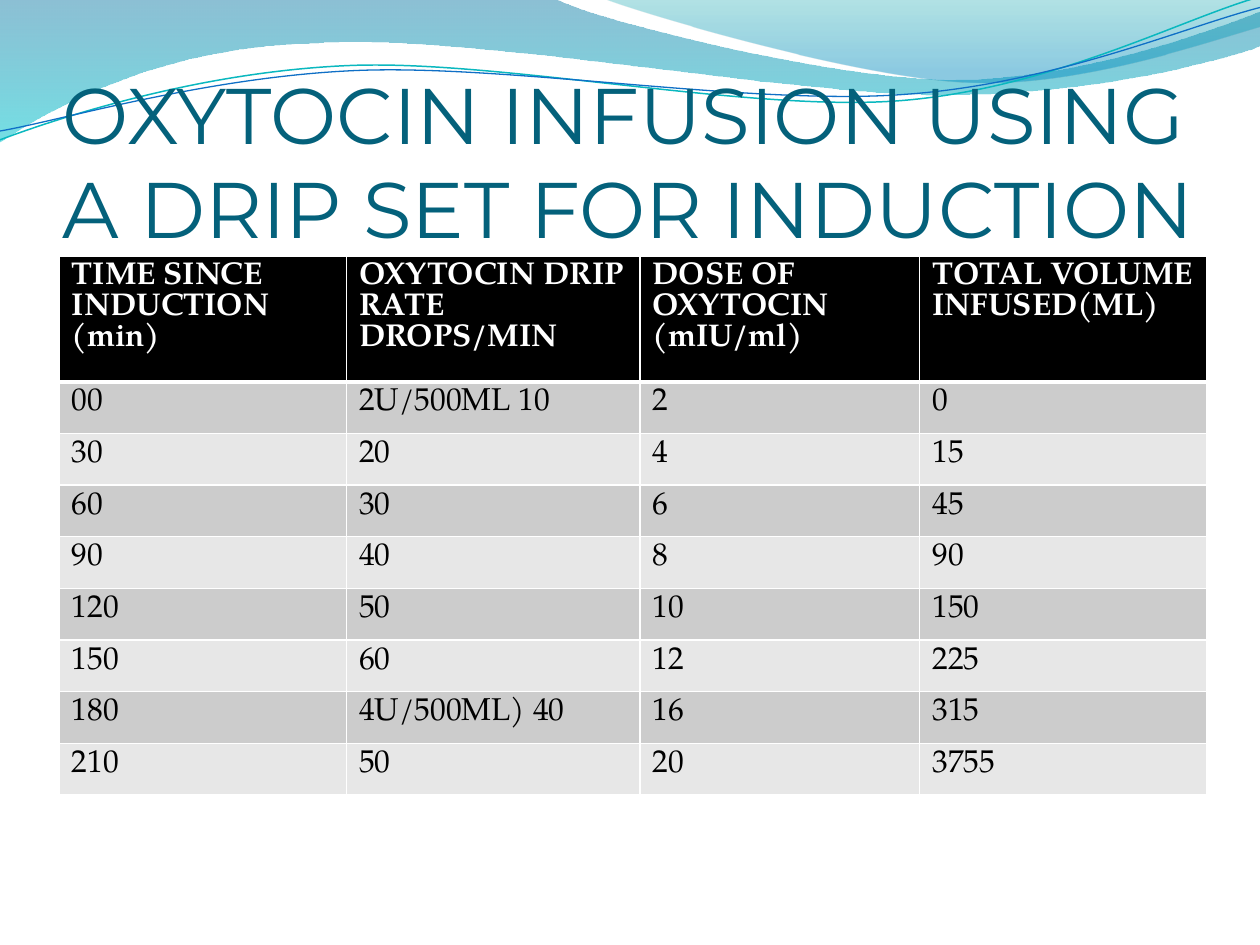
import math

import pptx
import pptx.dml.color
import pptx.enum.text
import pptx.oxml
import pptx.oxml.ns
import pptx.util
from lxml import etree

Inches, Pt, qn = pptx.util.Inches, pptx.util.Pt, pptx.oxml.ns.qn
WIDTH, HEIGHT = 10, 7.5
MARGIN = 0.05 * WIDTH
LINE_TILT = -2.7
TITLE_FONT, TABLE_FONT = "Montserrat", "TeX Gyre Pagella"

# A wave is a start point followed by lines (2 numbers) and Bezier curves (6 numbers).
BACK_WAVE = [(0, 0), (4.4, -0.01), (4.76, 0.17, 6.64, 0.63, 7.58, 0.63),
             (8.53, 0.63, 9.58, 0.26, 10, 0.09), (10.01, 0.36),
             (9.83, 0.44, 8.7, 0.76, 7.46, 0.75), (6.22, 0.75, 3.82, 0.28, 2.57, 0.34),
             (1.29, 0.36, 0.46, 0.83, -0.01, 1.13), (0, 0)]
FRONT_WAVE = [(4.79, -0.01), (5.09, 0.11, 6.82, 0.62, 7.69, 0.65),
              (8.56, 0.69, 9.61, 0.32, 10, 0.21), (10, 0), (4.79, -0.01)]
TEAL_LINE = [(0, 1.11), (0.48, 0.93, 1.58, 0.57, 2.77, 0.52),
             (3.95, 0.47, 5.93, 0.89, 7.13, 0.8), (8.33, 0.71, 9.38, 0.15, 9.98, -0.02)]
BLUE_LINE = [(0, 1.04), (0.47, 0.96, 1.64, 0.61, 2.83, 0.56),
             (4.03, 0.51, 5.97, 0.84, 7.17, 0.75), (8.36, 0.67, 9.41, 0.21, 10, 0.06)]

COLUMN_SHARES = [2.28, 2.33, 2.22, 2.28]
ROW_HEIGHT = 0.41
ROWS = [
    ["TIME SINCE INDUCTION (min)", "OXYTOCIN DRIP RATE DROPS/MIN",
     "DOSE OF OXYTOCIN (mIU/ml)", "TOTAL VOLUME INFUSED(ML)"],
    ["00", "2U/500ML 10", "2", "0"],
    ["30", "20", "4", "15"],
    ["60", "30", "6", "45"],
    ["90", "40", "8", "90"],
    ["120", "50", "10", "150"],
    ["150", "60", "12", "225"],
    ["180", "4U/500ML) 40", "16", "315"],
    ["210", "50", "20", "3755"],
]


def color(value):
    return pptx.dml.color.RGBColor.from_string(value)


def set_font(paragraph, name, size, value, bold=False):
    font = paragraph.font
    font.name, font.size, font.bold = name, Pt(size), bold
    font.color.rgb = color(value)


def turn(point, center, degrees):
    """Turn a point clockwise about a center."""
    sine, cosine = math.sin(math.radians(degrees)), math.cos(math.radians(degrees))
    x, y = point[0] - center[0], point[1] - center[1]
    return center[0] + x * cosine - y * sine, center[1] + x * sine + y * cosine


def add_wave(slide, box, wave, closed, center=(0, 0), tilt=0):
    left, top, width, height = box
    points = [turn(segment[i:i + 2], center, -tilt)
              for segment in wave for i in range(0, len(segment), 2)]
    points = [(Inches(left + x * width / WIDTH), Inches(top + y * height / HEIGHT))
              for x, y in points]
    builder = slide.shapes.build_freeform(*points[0])
    builder.add_line_segments(points[1:], close=closed)
    shape = builder.convert_to_shape()
    shape.shadow.inherit = False
    shape.rotation = tilt
    bend_segments(shape, wave)
    return shape


def bend_segments(shape, wave):
    """Join each three lines that stand for a curve into one Bezier segment."""
    lines = iter(list(shape.element.iter(qn("a:lnTo"))))
    for segment in wave[1:]:
        first = next(lines)
        if len(segment) == 6:
            curve = etree.Element(qn("a:cubicBezTo"))
            first.addprevious(curve)
            for line in (first, next(lines), next(lines)):
                curve.append(line[0])
                line.getparent().remove(line)


def fill_gradient(shape, stops):
    """Fill from top to bottom with (position, colour, opacity) stops in percent."""
    stop_xml = "".join(
        f'<a:gs pos="{position * 1000}"><a:srgbClr val="{value}">'
        f'<a:alpha val="{opacity * 1000}"/></a:srgbClr></a:gs>'
        for position, value, opacity in stops)
    gradient = pptx.oxml.parse_xml(
        f'<a:gradFill {pptx.oxml.ns.nsdecls("a")} rotWithShape="1"><a:gsLst>{stop_xml}</a:gsLst>'
        '<a:lin ang="5400000" scaled="0"/></a:gradFill>')
    shape.fill.background()
    properties = shape.element.spPr
    properties.replace(properties.find(qn("a:noFill")), gradient)


def add_waves(slide, box):
    for wave, stops in [(BACK_WAVE, [(0, "0074A1", 45), (100, "00C6CF", 55)]),
                        (FRONT_WAVE, [(0, "00A1A9", 30), (80, "008BBF", 45)])]:
        shape = add_wave(slide, box, wave, closed=True)
        shape.line.fill.background()
        fill_gradient(shape, stops)
    for wave, center, value, line_width in [(TEAL_LINE, (4.99, 0.57), "0AB8BF", 0.85),
                                            (BLUE_LINE, (5, 0.59), "0F6FC6", 0.75)]:
        shape = add_wave(slide, box, wave, False, center, LINE_TILT)
        shape.fill.background()
        shape.line.color.rgb = color(value)
        shape.line.width = Pt(line_width)


def add_title(slide, box, text):
    frame = slide.shapes.add_textbox(*map(Inches, box)).text_frame
    frame.word_wrap = True
    frame.vertical_anchor = pptx.enum.text.MSO_ANCHOR.BOTTOM
    frame.margin_left = frame.margin_right = frame.margin_bottom = 0
    frame.margin_top = Inches(0.05)
    frame.text = text
    set_font(frame.paragraphs[0], TITLE_FONT, 45, "04617B")


def set_borders(cell, widths):
    """Draw white borders, with widths in points for left, right, top and bottom."""
    properties = cell._tc.get_or_add_tcPr()
    for index, (side, width) in enumerate(zip(["lnL", "lnR", "lnT", "lnB"], widths)):
        border = etree.Element(qn(f"a:{side}"), w=str(Pt(width)))
        fill = etree.SubElement(border, qn("a:solidFill"))
        etree.SubElement(fill, qn("a:srgbClr"), val="FFFFFF")
        properties.insert(index, border)


def add_dose_table(slide, box):
    width, height = box[2:]
    frame = slide.shapes.add_table(len(ROWS), len(COLUMN_SHARES), *map(Inches, box))
    table = frame.table
    for column, share in zip(table.columns, COLUMN_SHARES):
        column.width = Inches(width * share / sum(COLUMN_SHARES))
    for row in table.rows:
        row.height = Inches(ROW_HEIGHT)
    frame.height = Inches(height)  # the header row grows to hold three lines
    for row_index, texts in enumerate(ROWS):
        header = row_index == 0
        background = "000000" if header else ("E7E7E7", "CCCCCC")[row_index % 2]
        top = 3 if row_index == 1 else 1
        bottom = 3 if header else 1
        for column_index, text in enumerate(texts):
            cell = table.cell(row_index, column_index)
            cell.text = text
            cell.fill.solid()
            cell.fill.fore_color.rgb = color(background)
            set_borders(cell, [1, 1, top, bottom])
            set_font(cell.text_frame.paragraphs[0], TABLE_FONT, 18,
                     "FFFFFF" if header else "000000", header)


def main():
    presentation = pptx.Presentation()
    presentation.slide_width, presentation.slide_height = Inches(WIDTH), Inches(HEIGHT)
    slide = presentation.slides.add_slide(presentation.slide_layouts[6])
    add_waves(slide, (0, 0, WIDTH, HEIGHT))
    add_title(slide, (MARGIN, 0.77, WIDTH - 2 * MARGIN, 1.25),
              "OXYTOCIN INFUSION USING A DRIP SET FOR INDUCTION")
    add_dose_table(slide, (0.47, 2.03, 9.11, 4.27))
    presentation.save("out.pptx")


if __name__ == "__main__":
    main()
